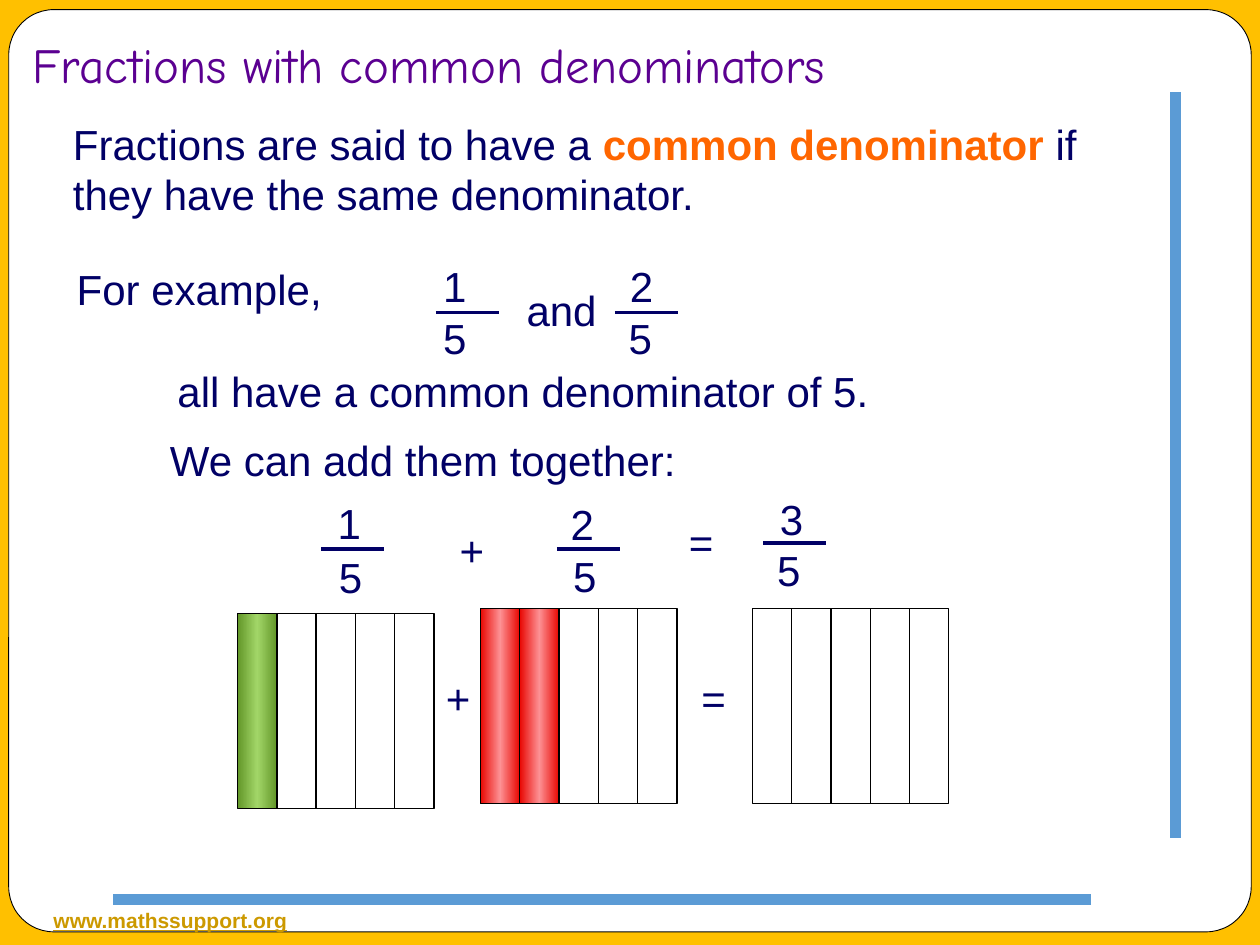
from copy import deepcopy
from dataclasses import dataclass

from lxml import etree
from pptx import Presentation
from pptx.dml.color import RGBColor
from pptx.enum.shapes import MSO_CONNECTOR, MSO_SHAPE
from pptx.enum.text import MSO_ANCHOR, MSO_AUTO_SIZE, PP_ALIGN
from pptx.oxml.ns import qn
from pptx.util import Pt

STRAIGHT = MSO_CONNECTOR.STRAIGHT
RECTANGLE = MSO_SHAPE.RECTANGLE
ROUNDED = MSO_SHAPE.ROUNDED_RECTANGLE
FIT_SHAPE = MSO_AUTO_SIZE.SHAPE_TO_FIT_TEXT
FIT_NONE = MSO_AUTO_SIZE.NONE
BOTTOM = MSO_ANCHOR.BOTTOM
LEFT = PP_ALIGN.LEFT

NAVY = "010066"
ORANGE = "FF6600"
GOLD = "CC9900"
PURPLE = "5B0091"
BLUE = "5B9BD5"
AMBER = "FFC000"
WHITE = "FFFFFF"
BLACK = "000000"
GREEN_SHADES = ("639729", "A2D668", "639729")
RED_SHADES = ("E80702", "FD9194", "E80702")

LINE_HEIGHT = 36
FRACTION_BAR = 36
PARTS = 5
PART_WIDTH = 22.45
PART_HEIGHT = 111.5


@dataclass
class Label:
    text: str
    left: float
    top: float
    width: float


@dataclass
class Fraction:
    top_digit: str
    bar: tuple[float, float]
    numerator: tuple[float, float]
    denominator: tuple[float, float]


@dataclass
class Strip:
    left: float
    top: float
    shaded: int = 0
    shades: tuple[str, ...] = ()


LABELS = [
    Label("For example,", 36.7, 146.9, 154.8),
    Label("and", 293.8, 159.1, 54.7),
    Label("all have a common denominator of 5.", 94.3, 205.2, 423.4),
    Label("We can add them together:", 90, 244.8, 303.8),
    Label("+", 255.6, 295.9, 28.8),
    Label("=", 386.6, 291.6, 28.8),
    Label("+", 247.7, 380.9, 28.8),
    Label("=", 393.8, 380.9, 28.8),
]
FRACTIONS = [
    Fraction("1", (249.1, 178.6), (246.2, 145.4), (246.2, 175)),
    Fraction("2", (351.4, 178.6), (352.8, 145.4), (352.1, 175)),
    Fraction("1", (183.6, 313.9), (185.8, 280.8), (186.5, 311.8)),
    Fraction("2", (318.2, 313.9), (319, 281.5), (320.4, 311)),
    Fraction("3", (436.3, 310.3), (438.5, 278.6), (437, 307.4)),
]
STRIPS = [
    Strip(135.8, 350.7, 1, GREEN_SHADES),
    Strip(274.6, 347.7, 2, RED_SHADES),
    Strip(430, 347.7),
]


def color(value: str) -> RGBColor:
    return RGBColor.from_string(value)


def add_span(para, text: str, *, size: float = 24, name: str = "Arial",
             fill: str = NAVY, bold: bool = False, underline: bool = False):
    span = para.add_run()
    span.text = text
    span.font.size = Pt(size)
    span.font.name = name
    span.font.color.rgb = color(fill)
    span.font.bold = bold
    span.font.underline = underline


def add_box(page, left: float, top: float, width: float,
            height: float = LINE_HEIGHT, wrap: bool = False):
    box = page.shapes.add_textbox(Pt(left), Pt(top), Pt(width), Pt(height))
    box.text_frame.word_wrap = wrap
    box.text_frame.auto_size = FIT_SHAPE
    return box.text_frame.paragraphs[0]


def add_line(page, start: tuple[float, float], end: tuple[float, float],
             stroke: str, weight: float):
    line = page.shapes.add_connector(
        STRAIGHT, *(Pt(value) for value in (*start, *end)))
    line.line.color.rgb = color(stroke)
    line.line.width = Pt(weight)
    etree.SubElement(line._element.spPr, qn("a:effectLst"))


def add_panel(page, kind, left: float, top: float, width: float, height: float,
              fill: str | None = None, weight: float | None = None):
    panel = page.shapes.add_shape(kind, Pt(left), Pt(top), Pt(width), Pt(height))
    panel.shadow.inherit = False
    if fill:
        panel.fill.solid()
        panel.fill.fore_color.rgb = color(fill)
    else:
        panel.fill.background()
    if weight:
        panel.line.color.rgb = color(BLACK)
        panel.line.width = Pt(weight)
    else:
        panel.line.fill.background()
    return panel


def shade(panel, shades: tuple[str, ...]):
    panel.fill.gradient()
    panel.fill.gradient_angle = 0
    first = next(panel._element.iter(qn("a:gs")))
    first.addnext(deepcopy(first))
    stops = list(panel.fill.gradient_stops)
    for index, (stop, value) in enumerate(zip(stops, shades)):
        stop.position = index / (len(shades) - 1)
        stop.color.rgb = color(value)


def draw_fraction(page, fraction: Fraction):
    left, top = fraction.bar
    add_line(page, fraction.bar, (left + FRACTION_BAR, top), NAVY, 2.25)
    digits = ((fraction.top_digit, fraction.numerator), ("5", fraction.denominator))
    for digit, place in digits:
        add_span(add_box(page, *place, 28.1), digit)


def draw_strip(page, strip: Strip):
    for index in range(PARTS):
        part = add_panel(page, RECTANGLE, strip.left + index * PART_WIDTH,
                         strip.top, PART_WIDTH, PART_HEIGHT, weight=0.75)
        if index < strip.shaded:
            shade(part, strip.shades)


def draw_frame(page):
    add_panel(page, RECTANGLE, 0, 0, 720, 540, AMBER)
    sheet = add_panel(page, ROUNDED, 5, 5.5, 710, 527, WHITE, 0.5)
    sheet.adjustments[0] = 0.049
    site = add_box(page, 23.5, 514.8, 150, 21.6)
    add_span(site, "www.mathssupport.org", size=12, fill=GOLD,
             bold=True, underline=True)
    add_line(page, (623.5, 514), (64.8, 514), BLUE, 6.5)
    add_line(page, (671.8, 52.6), (671.8, 478.8), BLUE, 6.5)


def draw_title(page):
    title = page.shapes.title
    title.left, title.top, title.width, title.height = (
        Pt(value) for value in (11.5, 14.4, 588.2, 46.1))
    frame = title.text_frame
    frame.auto_size = FIT_NONE
    frame.vertical_anchor = BOTTOM
    frame.margin_bottom = Pt(7.2)
    para = frame.paragraphs[0]
    para.alignment = LEFT
    add_span(para, "Fractions with common denominators",
             size=28, name="Comic Neue", fill=PURPLE)
    page.shapes._spTree.append(title._element)


def main():
    deck = Presentation()
    deck.slide_width, deck.slide_height = Pt(720), Pt(540)
    page = deck.slides.add_slide(deck.slide_layouts[5])
    draw_frame(page)
    draw_title(page)
    definition = add_box(page, 34.6, 64.1, 631.4, 64.8, wrap=True)
    add_span(definition, "Fractions are said to have a ")
    add_span(definition, "common denominator", fill=ORANGE, bold=True)
    add_span(definition, " if they have the same denominator.")
    for label in LABELS:
        add_span(add_box(page, label.left, label.top, label.width), label.text)
    for fraction in FRACTIONS:
        draw_fraction(page, fraction)
    for strip in STRIPS:
        draw_strip(page, strip)
    deck.save("out.pptx")


if __name__ == "__main__":
    main()
